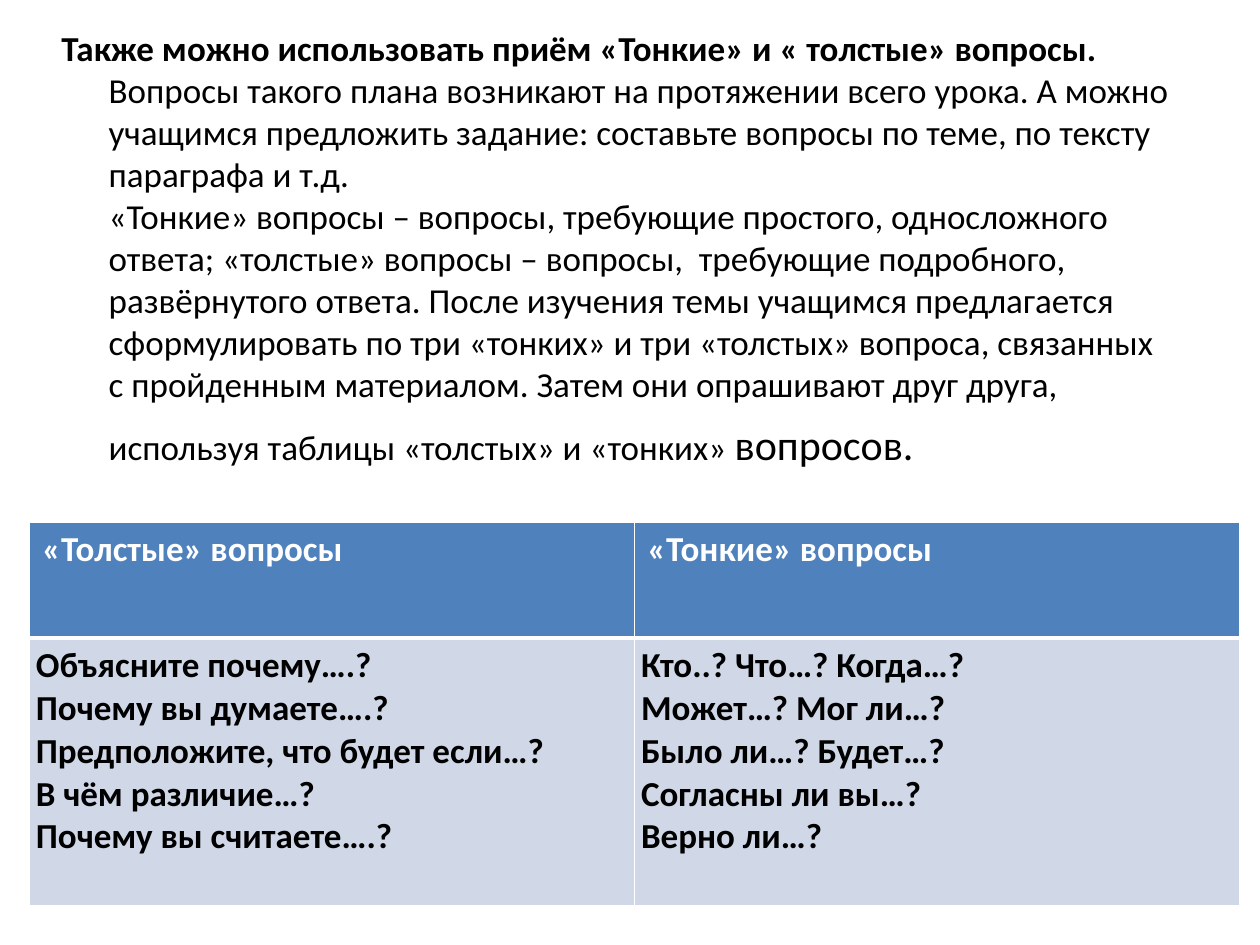
from lxml import etree
from pptx import Presentation
from pptx.dml.color import RGBColor
from pptx.enum.text import MSO_ANCHOR
from pptx.oxml.ns import qn
from pptx.util import Pt

TOP = MSO_ANCHOR.TOP
FONT = "Calibri"
HEX = {"text": "000000", "white": "FFFFFF", "head": "4F81BD", "body": "D0D8E8"}

TITLE = "Также можно использовать приём «Тонкие» и « толстые» вопросы.\n"
INTRO = (
    "Вопросы такого плана возникают на протяжении всего урока. А можно "
    "учащимся предложить задание: составьте вопросы по теме, по тексту "
    "параграфа и т.д.\n"
    "«Тонкие» вопросы – вопросы, требующие простого, односложного ответа; "
    "«толстые» вопросы – вопросы,  требующие подробного,  развёрнутого ответа. "
    "После изучения темы учащимся предлагается сформулировать по три «тонких» "
    "и три «толстых» вопроса, связанных с пройденным материалом. Затем они "
    "опрашивают друг друга, используя таблицы «толстых» и «тонких» "
)
HEADS = ["«Толстые» вопросы", "«Тонкие» вопросы"]
ASKS = [
    "Объясните почему….?\nПочему вы думаете….?\n"
    "Предположите, что будет если…?\nВ чём различие…?\nПочему вы считаете….?",
    "Кто..? Что…? Когда…?\nМожет…? Мог ли…?\nБыло ли…? Будет…?\n"
    "Согласны ли вы…?\nВерно ли…?",
]


def write(para, text, size=20, bold=False, color="text"):
    """Add text to a paragraph, with a line break at each newline."""
    for i, line in enumerate(text.split("\n")):
        if i:
            para.add_line_break()
        if line:
            run = para.add_run()
            run.text = line
            font = run.font
            font.name, font.size, font.bold = FONT, Pt(size), bold
            font.color.rgb = RGBColor.from_string(HEX[color])


def edge(cell, **widths):
    """Draw white cell borders; they must come before the cell's fill."""
    props = cell._tc.get_or_add_tcPr()
    for i, (side, width) in enumerate(widths.items()):
        line = etree.Element(qn("a:ln" + side), w=str(Pt(width)))
        fill = etree.SubElement(line, qn("a:solidFill"))
        etree.SubElement(fill, qn("a:srgbClr"), val=HEX["white"])
        props.insert(i, line)


def intro(slide, left, top, width, height):
    frame = slide.shapes.add_textbox(Pt(left), Pt(top), Pt(width), Pt(height)).text_frame
    frame.word_wrap = True
    frame.vertical_anchor = TOP
    para = frame.paragraphs[0]
    # Hanging indent
    props = para._p.get_or_add_pPr()
    props.set("marL", str(Pt(27)))
    props.set("indent", str(-Pt(27)))
    write(para, TITLE, bold=True)
    write(para, INTRO)
    write(para, "вопросов. ", size=24)
    write(para, " ", size=32)


def grid(slide, left, top, width, rows):
    table = slide.shapes.add_table(
        2, 2, Pt(left), Pt(top), Pt(width), Pt(sum(rows))).table
    for row, height in zip(table.rows, rows):
        row.height = Pt(height)
    for i, pair in enumerate(zip(HEADS, ASKS)):
        table.columns[i].width = Pt(width / 2)
        for j, text in enumerate(pair):
            cell = table.cell(j, i)
            cell.fill.solid()
            cell.fill.fore_color.rgb = RGBColor.from_string(HEX["body" if j else "head"])
            # The heavy rule lies between heading and body
            edge(cell, L=1, R=1, T=3 if j else 1, B=1 if j else 3)
            if j:
                cell.margin_left = cell.margin_right = Pt(3.6)
            cell.margin_top = cell.margin_bottom = Pt(3.6)
            write(cell.text_frame.paragraphs[0], text, bold=True,
                  color="text" if j else "white")


def main():
    deck = Presentation()
    deck.slide_width, deck.slide_height = Pt(720), Pt(540)
    slide = deck.slides.add_slide(deck.slide_layouts[6])
    intro(slide, 28, 11.5, 648, 460)
    grid(slide, 16.9, 298.3, 691.6, [66.2, 152.9])
    deck.save("out.pptx")


if __name__ == "__main__":
    main()
